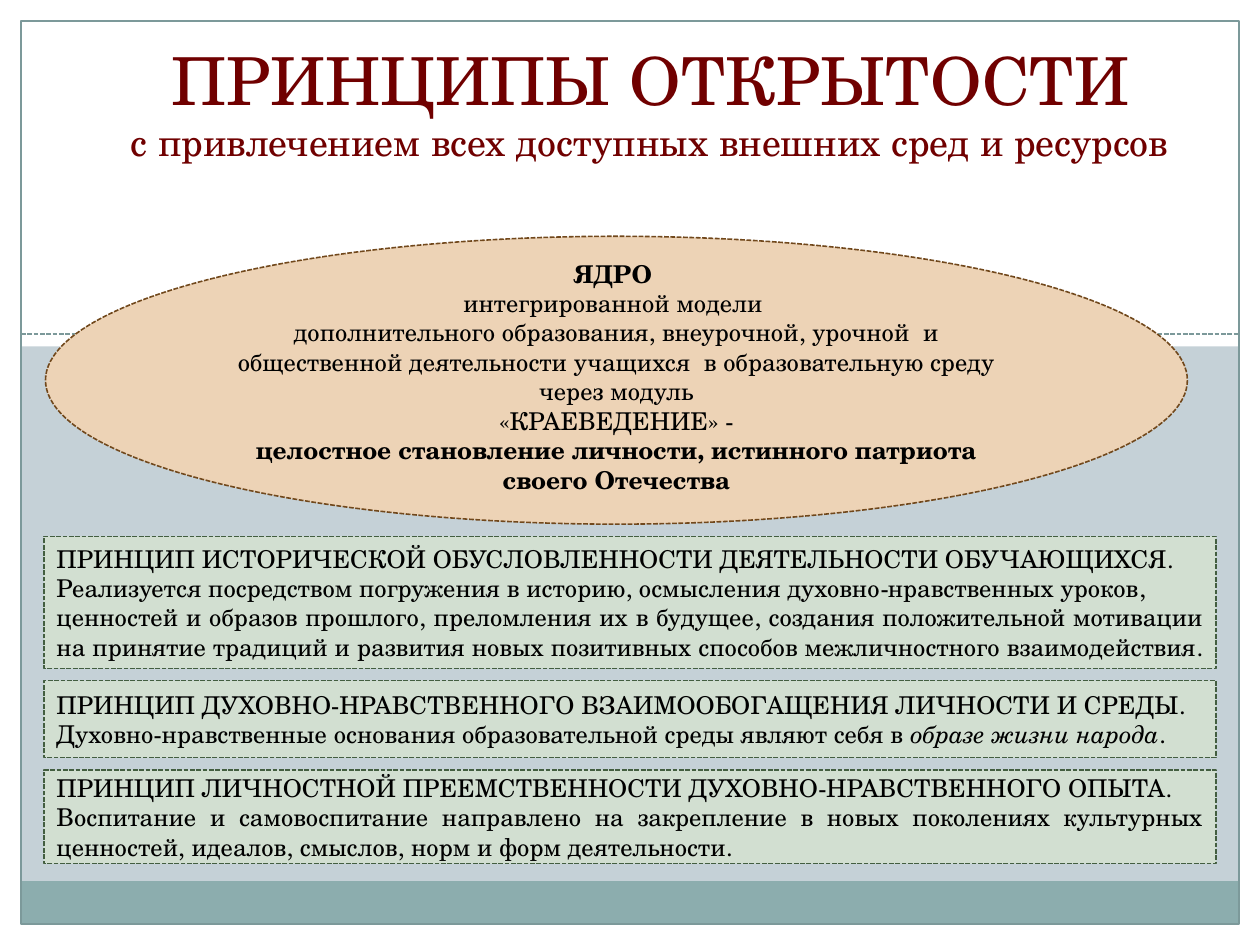
from pptx import Presentation
from pptx.dml.color import RGBColor as RGB
from pptx.enum.dml import MSO_LINE as Dash
from pptx.enum.shapes import MSO_CONNECTOR as Conn, MSO_SHAPE as Kind
from pptx.enum.text import MSO_ANCHOR as Anchor, PP_ALIGN as Align
from pptx.oxml.ns import qn
from pptx.util import Pt
from lxml.etree import SubElement

FONT = "TeX Gyre Schola"
HUES = {
    "page": "C5D1D7", "white": "FFFFFF", "band": "8CADAE", "frame": "7C999A",
    "title": "700000", "text": "000000", "core": "EDD3B6", "rim": "71481C",
    "card": "D2DFD1", "edge": "435E40",
}


def add_form(kind, box, fill=None, line=None, width=0.9, dash=Dash.SQUARE_DOT):
    form = slide.shapes.add_shape(kind, *[Pt(v) for v in box])
    form.shadow.inherit = False
    if fill:
        form.fill.solid()
        form.fill.fore_color.rgb = RGB.from_string(HUES[fill])
    else:
        form.fill.background()
    if line:
        form.line.color.rgb = RGB.from_string(HUES[line])
        form.line.width = Pt(width)
        form.line.dash_style = dash
    else:
        form.line.fill.background()
    return form


def write(frame, paras, align):
    """Fill the frame with paragraphs, each a list of (text, style) runs."""
    frame.word_wrap = True
    frame.vertical_anchor = Anchor.MIDDLE
    for i, runs in enumerate(paras):
        para = frame.paragraphs[0] if i == 0 else frame.add_paragraph()
        para.alignment = align
        for text, style in runs:
            run = para.add_run()
            run.text = text
            run.font.name = FONT
            run.font.size = Pt(14)
            run.font.bold = style == "bold"
            run.font.italic = style == "italic"
            run.font.color.rgb = RGB.from_string(HUES["text"])


deck = Presentation()
deck.slide_width, deck.slide_height = Pt(720), Pt(540)
slide = deck.slides.add_slide(deck.slide_layouts[6])
slide.background.fill.solid()
slide.background.fill.fore_color.rgb = RGB.from_string(HUES["page"])

# White margins and header, footer band
for box in [(0, 528, 720, 12), (708, 0, 12, 540), (0, 0, 12, 540), (0, 0, 720, 198)]:
    add_form(Kind.RECTANGLE, box, "white")
add_form(Kind.RECTANGLE, (12, 503.5, 696, 24.5), "band")

rule = slide.shapes.add_connector(Conn.STRAIGHT, Pt(12), Pt(190.8), Pt(708), Pt(190.8))
rule.line.color.rgb = RGB.from_string(HUES["frame"])
rule.line.width = Pt(0.9)
rule.line.dash_style = Dash.SQUARE_DOT
SubElement(rule._element.spPr, qn("a:effectLst"))
add_form(Kind.RECTANGLE, (12, 12, 696, 516), None, "frame", 0.75, Dash.SOLID)

# Title
title = slide.shapes.add_textbox(Pt(65.5), Pt(16), Pt(612), Pt(107)).text_frame
title.word_wrap = True
title.vertical_anchor = Anchor.BOTTOM
title.margin_bottom = Pt(29.5)
title.text = "ПРИНЦИПЫ ОТКРЫТОСТИ\vс привлечением всех доступных внешних сред и ресурсов"
head = title.paragraphs[0]
head.alignment = Align.CENTER
for run, size in zip(head.runs, (37.8, 21.6)):
    run.font.name = FONT
    run.font.size = Pt(size)
    run.font.color.rgb = RGB.from_string(HUES["title"])

# Core of the model
core = add_form(Kind.OVAL, (26, 135, 652.5, 164.5), "core", "rim").text_frame
core.margin_bottom = Pt(8)
write(core, [
    [("ЯДРО ", "bold")],
    [("интегрированной модели ", "")],
    [("дополнительного образования, внеурочной, урочной  и общественной деятельности "
      "учащихся  в образовательную среду через модуль", "")],
    [("«КРАЕВЕДЕНИЕ» -", "")],
    [("целостное становление личности, истинного патриота своего Отечества", "bold")],
], Align.CENTER)

# Principles: top, height, paragraphs
cards = [
    (306.5, 75.5, [
        [("ПРИНЦИП ИСТОРИЧЕСКОЙ ОБУСЛОВЛЕННОСТИ ДЕЯТЕЛЬНОСТИ ОБУЧАЮЩИХСЯ.", "")],
        [("Реализуется посредством погружения в историю, осмысления "
          "духовно-нравственных уроков, ", "")],
        [("ценностей и образов прошлого, преломления их в будущее, создания "
          "положительной мотивации на принятие традиций и развития новых позитивных "
          "способов межличностного взаимодействия. ", "")],
    ]),
    (389, 44, [
        [("ПРИНЦИП ДУХОВНО-НРАВСТВЕННОГО ВЗАИМООБОГАЩЕНИЯ ЛИЧНОСТИ И СРЕДЫ.", "")],
        [("Духовно-нравственные основания образовательной среды являют себя в ", ""),
         ("образе жизни народа", "italic"), (". ", "")],
    ]),
    (440, 53.5, [
        [("ПРИНЦИП ЛИЧНОСТНОЙ ПРЕЕМСТВЕННОСТИ ДУХОВНО-НРАВСТВЕННОГО ОПЫТА.", "")],
        [("Воспитание и самовоспитание направлено на закрепление в новых поколениях "
          "культурных ценностей, идеалов, смыслов, норм и форм деятельности. ", "")],
    ]),
]
for top, height, paras in cards:
    card = add_form(Kind.RECTANGLE, (25.2, top, 669.6, height), "card", "edge")
    write(card.text_frame, paras, Align.JUSTIFY)

deck.save("out.pptx")
